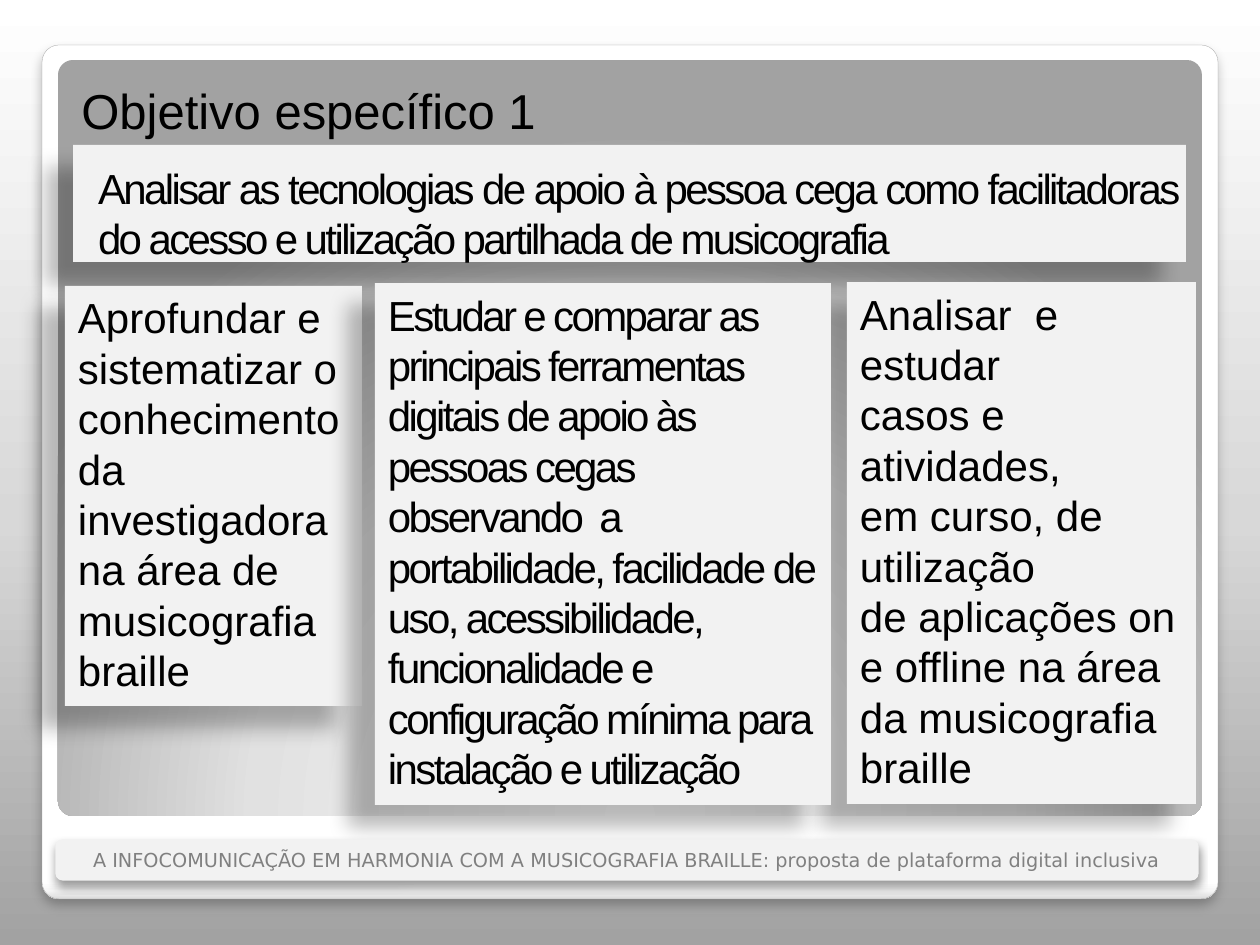
from lxml import etree
from pptx import Presentation, util as u
from pptx.dml.color import RGBColor
from pptx.enum import shapes, text
from pptx.oxml import ns, parse_xml

PX = 914400 / 126
BLACK = RGBColor(0x00, 0x00, 0x00)
PALE = RGBColor(0xF2, 0xF2, 0xF2)
GREY = RGBColor(0x80, 0x80, 0x80)
EDGE = RGBColor(0xA4, 0xA4, 0xA4)
RECT = shapes.MSO_SHAPE.RECTANGLE
ROUND = shapes.MSO_SHAPE.ROUNDED_RECTANGLE
LEFT, MID, JUST = (text.PP_ALIGN.LEFT, text.PP_ALIGN.CENTER,
                   text.PP_ALIGN.JUSTIFY)
# Shadow: opacity %, blur pt, distance pt, direction in degrees
DEEP = (28, 11.8, 19.7, 141)

deck = Presentation()
deck.slide_width, deck.slide_height = u.Inches(10), u.Inches(7.5)
slide = deck.slides.add_slide(deck.slide_layouts[6])


def blend(fill, root, stops, way):
    """Give a fill its gradient stops and its direction."""
    fill.gradient()
    grad = next(root.iter(ns.qn("a:gradFill")))
    for part in list(grad):
        grad.remove(part)
    rows = "".join(f'<a:gs pos="{pos * 1000}"><a:srgbClr val="{tone}"/></a:gs>'
                   for pos, tone in stops)
    grad.append(parse_xml(f'<a:gsLst {ns.nsdecls("a")}>{rows}</a:gsLst>'))
    grad.append(parse_xml(way))


def panel(kind, box, shade=None, lines=(), size=24, font="Arial", tone=BLACK,
          space=0, align=LEFT, pad=(13, 6, 13, 6)):
    """Add a pale shape with its shadow and one paragraph per line."""
    shape = slide.shapes.add_shape(kind, *(round(n * PX) for n in box))
    shape.shadow.inherit = False
    shape.fill.solid()
    shape.fill.fore_color.rgb = PALE
    shape.line.fill.background()
    if shade:
        alpha, blur, dist, turn = shade
        glow = next(shape._element.iter(ns.qn("a:effectLst")))
        drop = etree.SubElement(
            glow, ns.qn("a:outerShdw"), blurRad=str(u.Pt(blur)),
            dist=str(u.Pt(dist)), dir=str(turn * 60000), algn="t",
            rotWithShape="0")
        ink = etree.SubElement(drop, ns.qn("a:srgbClr"), val="000000")
        etree.SubElement(ink, ns.qn("a:alpha"), val=str(alpha * 1000))
    frame = shape.text_frame
    frame.word_wrap = True
    frame.vertical_anchor = text.MSO_ANCHOR.TOP
    (frame.margin_left, frame.margin_top, frame.margin_right,
     frame.margin_bottom) = (round(n * PX) for n in pad)
    for i, line in enumerate(lines):
        para = frame.add_paragraph() if i else frame.paragraphs[0]
        para.alignment = align
        run = para.add_run()
        run.text = line
        run.font.size, run.font.name = u.Pt(size), font
        run.font.color.rgb = tone
        if space:
            run.font._element.set("spc", str(space))
    return shape


# Background and frame
A = ns.nsdecls("a")
blend(slide.background.fill, slide._element,
      [(0, "A2A2A2"), (45, "D8D8D8"), (100, "FFFFFF")],
      f'<a:lin {A} ang="16200000" scaled="0"/>')
card = panel(ROUND, (42, 45, 1176, 854), (25, 6, 4, 90))
card.line.color.rgb, card.line.width = EDGE, u.Pt(0.16)
blend(card.fill, card._element,
      [(0, "FFFFFF"), (98, "FFFFFF"), (99, "F7F7F7"), (100, "DADADA")],
      f'<a:lin {A} ang="5400000" scaled="0"/>')
field = panel(ROUND, (58, 60, 1144, 756))
blend(field.fill, field._element,
      [(0, "FFFFFF"), (55, "E1E1E1"), (100, "A2A2A2")],
      f'<a:path {A} path="circle"><a:fillToRect l="50000" t="175000" '
      'r="50000" b="-75000"/></a:path>')
for plate in (card, field):
    plate.adjustments[0] = 0.02

# Goal
panel(RECT, (73, 145, 1113, 117), DEEP,
      ["Analisar as tecnologias de apoio à pessoa cega como facilitadoras "
       "do acesso e utilização partilhada de musicografia"],
      space=-150, align=JUST, pad=(25, 17, 9, 6))

# Title
title = slide.shapes.add_textbox(*(round(n * PX) for n in (66, 74, 485, 72)))
para = title.text_frame.paragraphs[0]
para.alignment = MID
run = para.add_run()
run.text = "Objetivo específico 1"
run.font.size, run.font.name = u.Pt(28), "Arial"
run.font.color.rgb = BLACK

# Three tasks
tasks = [
    ((847, 282, 349, 522), 0,
     ["Analisar  e estudar", "casos e atividades,", "em curso, de",
      "utilização", "de aplicações on", "e offline na área",
      "da musicografia", "braille"]),
    ((65, 286, 297, 420), 0,
     ["Aprofundar e sistematizar o", "conhecimento da investigadora",
      "na área de musicografia braille"]),
    ((375, 283, 456, 522), -150,
     ["Estudar e comparar as principais ferramentas digitais de apoio às "
      "pessoas cegas observando  a portabilidade, facilidade de uso, "
      "acessibilidade, funcionalidade e configuração mínima para "
      "instalação e utilização"]),
]
for box, space, lines in tasks:
    panel(RECT, box, DEEP, lines, space=space)

# Footer
foot = panel(ROUND, (56, 840, 1142, 40), (40, 5.2, 3, 90),
             ["A INFOCOMUNICAÇÃO EM HARMONIA COM A MUSICOGRAFIA BRAILLE: "
              "proposta de plataforma digital inclusiva"],
             size=11, font="DejaVu Sans", tone=GREY, align=MID)
foot.text_frame.vertical_anchor = text.MSO_ANCHOR.MIDDLE
foot.line.color.rgb, foot.line.width = PALE, u.Pt(0.75)

deck.save("out.pptx")
